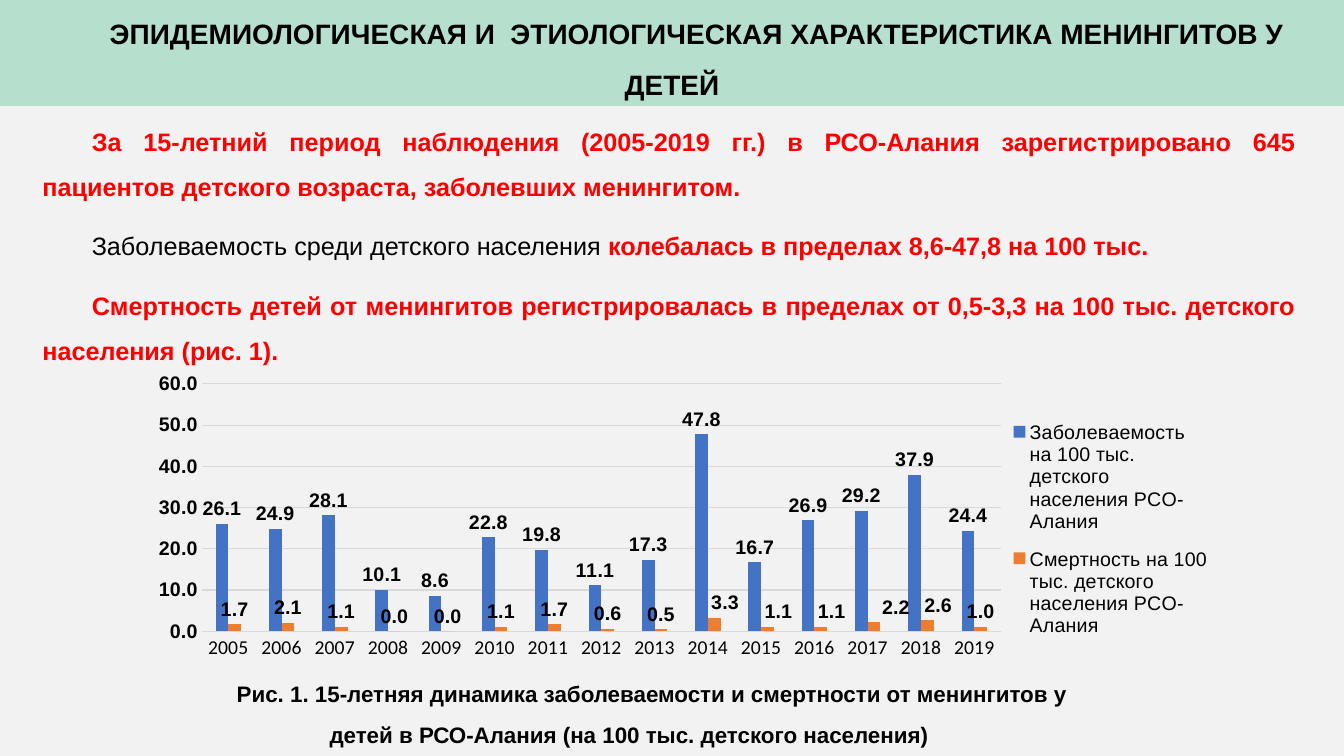
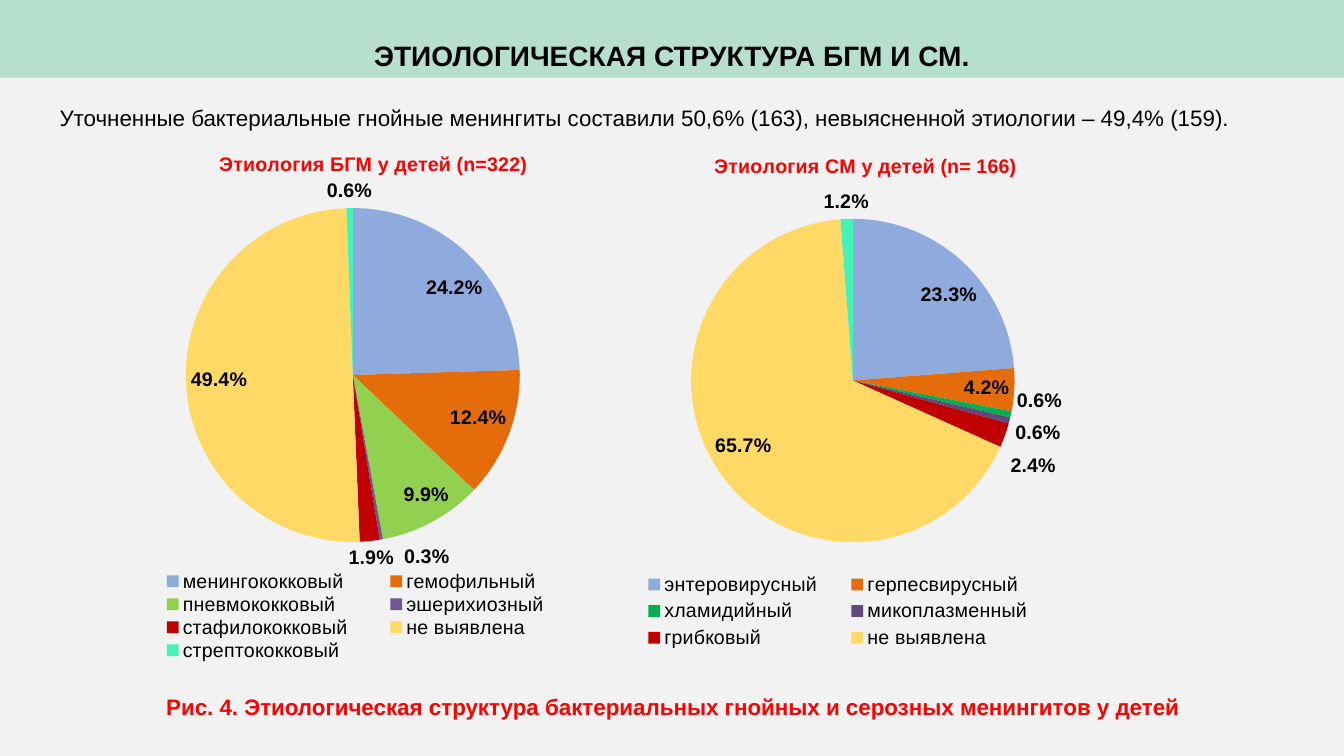
"""Build two slides on the epidemiology and aetiology of meningitis in children."""
from lxml import etree
from pptx import Presentation
from pptx.chart.data import CategoryChartData
from pptx.dml.color import RGBColor
from pptx.enum.chart import XL_CHART_TYPE, XL_LABEL_POSITION, XL_LEGEND_POSITION, XL_TICK_MARK
from pptx.enum.text import MSO_ANCHOR, MSO_AUTO_SIZE, PP_ALIGN
from pptx.oxml.ns import qn
from pptx.util import Inches, Pt

COLORS = {
    "background": "F2F2F2", "band": "B6DFCD", "black": "000000", "red": "FF0000",
    "grid": "D9D9D9", "incidence": "4472C4", "mortality": "ED7D31",
    "blue": "8FAADC", "orange": "E46C0A", "lime": "92D050", "violet": "70578F",
    "green": "00B050", "plum": "604A7B", "crimson": "C00000", "yellow": "FFD966",
    "mint": "43F3B8",
}
RGB = {name: RGBColor.from_string(value) for name, value in COLORS.items()}


def write(p, text, size=16, color="black", bold=True, align=PP_ALIGN.CENTER,
          indent=0.45, spacing=1.5, after=10):
    p.alignment, p.line_spacing = align, spacing
    p.space_before, p.space_after = Pt(0), Pt(after)
    pPr = p._p.get_or_add_pPr()
    pPr.set("marL", "0")
    pPr.set("indent", str(Inches(indent)))
    if pPr.find(qn("a:buNone")) is None:
        etree.SubElement(pPr, qn("a:buNone"))
    r = p.add_run()
    r.text = text
    r.font.name, r.font.size, r.font.bold = "Arial", Pt(size), bold
    r.font.color.rgb = RGB[color]


def place(parent, index, **values):
    old = parent.find(qn("c:layout"))
    if old is not None:
        parent.remove(old)
    layout = etree.Element(qn("c:layout"))
    manual = etree.SubElement(layout, qn("c:manualLayout"))
    for tag, value in values.items():
        etree.SubElement(manual, qn(f"c:{tag}")).set("val", str(value))
    parent.insert(index, layout)


prs = Presentation()
prs.slide_width, prs.slide_height = Inches(13.33), Inches(7.5)
fill = prs.slide_master.background.fill
fill.solid()
fill.fore_color.rgb = RGB["background"]

SLIDES = [
    {"title": "ЭПИДЕМИОЛОГИЧЕСКАЯ И  ЭТИОЛОГИЧЕСКАЯ ХАРАКТЕРИСТИКА МЕНИНГИТОВ У ДЕТЕЙ",
     "band": 1.05, "indent": 0.49, "body": (0.32, 1.05, 12.63, 2.6), "size": 18,
     "paragraphs": [
         [("За 15-летний период наблюдения (2005-2019 гг.) в РСО-Алания зарегистрировано "
           "645 пациентов детского возраста, заболевших менингитом.", "red", True)],
         [("Заболеваемость среди детского населения ", "black", False),
          ("колебалась в пределах 8,6-47,8 на 100 тыс.", "red", True)],
         [("Смертность детей от менингитов регистрировалась в пределах от 0,5-3,3 "
           "на 100 тыс. детского населения (рис. 1).", "red", True)]],
     "caption": "Рис. 1. 15-летняя динамика заболеваемости и смертности от менингитов у детей "
                "в РСО-Алания (на 100 тыс. детского населения)",
     "caption_at": (1.65, 6.57, 9.18, 0.86), "caption_color": "black"},
    {"title": "ЭТИОЛОГИЧЕСКАЯ СТРУКТУРА БГМ И СМ.",
     "band": 0.77, "indent": 0, "body": (0, 0.85, 13.33, 0.45), "size": 16,
     "paragraphs": [
         [("Уточненные бактериальные гнойные менингиты составили 50,6% (163), "
           "невыясненной этиологии – 49,4% (159).", "black", False)]],
     "caption": "Рис. 4. Этиологическая структура бактериальных гнойных и серозных "
                "менингитов у детей",
     "caption_at": (0.74, 6.69, 11.42, 0.5), "caption_color": "red"},
]

slides = []
for item in SLIDES:
    s = prs.slides.add_slide(prs.slide_layouts[1])
    slides.append(s)
    title, body = s.placeholders
    title.left, title.top = Inches(0), Inches(0)
    title.width, title.height = prs.slide_width, Inches(item["band"])
    title.fill.solid()
    title.fill.fore_color.rgb = RGB["band"]
    title.text_frame.vertical_anchor = MSO_ANCHOR.BOTTOM
    write(title.text_frame.paragraphs[0], item["title"], size=20, indent=item["indent"], after=0)

    body.left, body.top, body.width, body.height = map(Inches, item["body"])
    for i, runs in enumerate(item["paragraphs"]):
        tf = body.text_frame
        p = tf.add_paragraph() if i else tf.paragraphs[0]
        for text, color, bold in runs:
            write(p, text, item["size"], color, bold, PP_ALIGN.JUSTIFY, 0.49)

    caption = s.shapes.add_textbox(*map(Inches, item["caption_at"]))
    caption.text_frame.word_wrap = True
    write(caption.text_frame.paragraphs[0], item["caption"], color=item["caption_color"])
    for sp in (title, body, caption):
        sp.text_frame.auto_size = MSO_AUTO_SIZE.NONE

data = CategoryChartData(number_format="0.0")
data.categories = [str(year) for year in range(2005, 2020)]
data.add_series("Заболеваемость на 100 тыс. детского населения РСО-Алания",
                (26.1, 24.9, 28.1, 10.1, 8.6, 22.8, 19.8, 11.1, 17.3, 47.8,
                 16.7, 26.9, 29.2, 37.9, 24.4))
data.add_series("Смертность на 100 тыс. детского населения РСО-Алания",
                (1.7, 2.1, 1.1, 0, 0, 1.1, 1.7, 0.6, 0.5, 3.3, 1.1, 1.1, 2.2, 2.6, 1))
chart = slides[0].shapes.add_chart(
    XL_CHART_TYPE.COLUMN_CLUSTERED, *map(Inches, (1.24, 3.52, 10.86, 3.61)), data).chart
chart.has_title = False
chart.font.name, chart.font.size = "Calibri", Pt(14)
chart.font.color.rgb = RGB["black"]
chart.has_legend = True
chart.legend.position = XL_LEGEND_POSITION.RIGHT
chart.legend.include_in_layout = False
chart.legend.font.name, chart.legend.font.size = "Arial", Pt(14)

years, rates = chart.category_axis, chart.value_axis
for axis in (years, rates):
    axis.major_tick_mark = axis.minor_tick_mark = XL_TICK_MARK.NONE
rates.minimum_scale, rates.maximum_scale, rates.major_unit = 0, 60, 10
rates.format.line.fill.background()
rates.tick_labels.number_format = "0.0"
rates.tick_labels.number_format_is_linked = False
rates.tick_labels.font.name, rates.tick_labels.font.bold = "Arial", True
rates.tick_labels.font.size = Pt(14)
for line in (years.format.line, rates.major_gridlines.format.line):
    line.color.rgb, line.width = RGB["grid"], Pt(0.75)

plot = chart.plots[0]
plot.gap_width, plot.overlap, plot.vary_by_categories = 219, 0, False
for series, color in zip(plot.series, ("incidence", "mortality")):
    series.format.fill.solid()
    series.format.fill.fore_color.rgb = RGB[color]
    labels = series.data_labels
    labels.show_value, labels.position = True, XL_LABEL_POSITION.OUTSIDE_END
    labels.number_format, labels.number_format_is_linked = "0.0", False
    labels.font.name, labels.font.size, labels.font.bold = "Arial", Pt(14), True

label_shifts = {9: 0.01, 10: 0.01, 11: 0.01, 12: 0.02, 13: 0.01}
for i in label_shifts:
    label = plot.series[1].points[i].data_label
    label.position = XL_LABEL_POSITION.OUTSIDE_END
    label.font.name, label.font.size, label.font.bold = "Arial", Pt(14), True
for label, shift in zip(chart.element.iter(qn("c:dLbl")), label_shifts.values()):
    place(label, 1, x=shift, y=0)

place(chart.element.find(".//" + qn("c:plotArea")), 0, layoutTarget="inner",
      xMode="edge", yMode="edge", x=0.07, y=0.08, w=0.73, h=0.68)
place(chart.element.find(".//" + qn("c:legend")), 1,
      xMode="edge", yMode="edge", x=0.81, y=0.14, w=0.18, h=0.68)

PIES = [
    {"title": "Этиология БГМ у детей (n=322)", "at": (1, 1.25, 4.95, 5.43),
     "slices": [("менингококковый", 0.242, "blue"), ("гемофильный", 0.124, "orange"),
                ("пневмококковый", 0.099, "lime"), ("эшерихиозный", 0.003, "violet"),
                ("стафилококковый", 0.019, "crimson"), ("не выявлена", 0.494, "yellow"),
                ("стрептококковый", 0.006, "mint")],
     "title_at": (0.23, 0.04), "plot": (0.14, 0.15, 0.73, 0.61),
     "legend": (0.06, 0.81, 0.9, 0.17)},
    {"title": "Этиология СМ у детей (n= 166)", "at": (5.91, 1.33, 4.95, 5.26),
     "slices": [("энтеровирусный", 0.233, "blue"), ("герпесвирусный", 0.042, "orange"),
                ("хламидийный", 0.006, "green"), ("микоплазменный", 0.006, "plum"),
                ("грибковый", 0.024, "crimson"), ("не выявлена", 0.657, "yellow"),
                ("", 0.012, "mint")],
     "title_at": (0.23, 0.03), "plot": (0.15, 0.16, 0.73, 0.61),
     "legend": (0.05, 0.82, 0.87, 0.16)},
]

for pie in PIES:
    names, values, colors = zip(*pie["slices"])
    data = CategoryChartData(number_format="0.0%")
    data.categories = names
    data.add_series(pie["title"], values)
    chart = slides[1].shapes.add_chart(XL_CHART_TYPE.PIE, *map(Inches, pie["at"]), data).chart
    chart.font.name, chart.font.size = "Arial", Pt(14)
    chart.font.color.rgb = RGB["black"]
    chart.has_title = True
    write(chart.chart_title.text_frame.paragraphs[0], pie["title"], size=14, color="red",
          indent=0, spacing=1.0, after=0)
    chart.has_legend = True
    chart.legend.position = XL_LEGEND_POSITION.RIGHT
    chart.legend.include_in_layout = False
    chart.legend.font.name, chart.legend.font.size = "Arial", Pt(14)

    series = chart.plots[0].series[0]
    for i, color in enumerate(colors):
        fill = series.points[i].format.fill
        fill.solid()
        fill.fore_color.rgb = RGB[color]
    labels = series.data_labels
    labels.show_value, labels.position = True, XL_LABEL_POSITION.BEST_FIT
    labels.number_format, labels.number_format_is_linked = "0.0%", False
    labels.font.name, labels.font.size, labels.font.bold = "Arial", Pt(14), True
    for leader in chart.element.iter(qn("c:showLeaderLines")):
        leader.set("val", "0")

    legend = chart.element.find(".//" + qn("c:legend"))
    place(chart.element.find(".//" + qn("c:title")), 1,
          xMode="edge", yMode="edge", **dict(zip("xy", pie["title_at"])))
    place(chart.element.find(".//" + qn("c:plotArea")), 0, layoutTarget="inner",
          xMode="edge", yMode="edge", **dict(zip("xywh", pie["plot"])))
    place(legend, 1, xMode="edge", yMode="edge", **dict(zip("xywh", pie["legend"])))
    if "" in names:
        entry = etree.Element(qn("c:legendEntry"))
        etree.SubElement(entry, qn("c:idx")).set("val", str(names.index("")))
        etree.SubElement(entry, qn("c:delete")).set("val", "1")
        legend.insert(1, entry)

prs.save("out.pptx")
